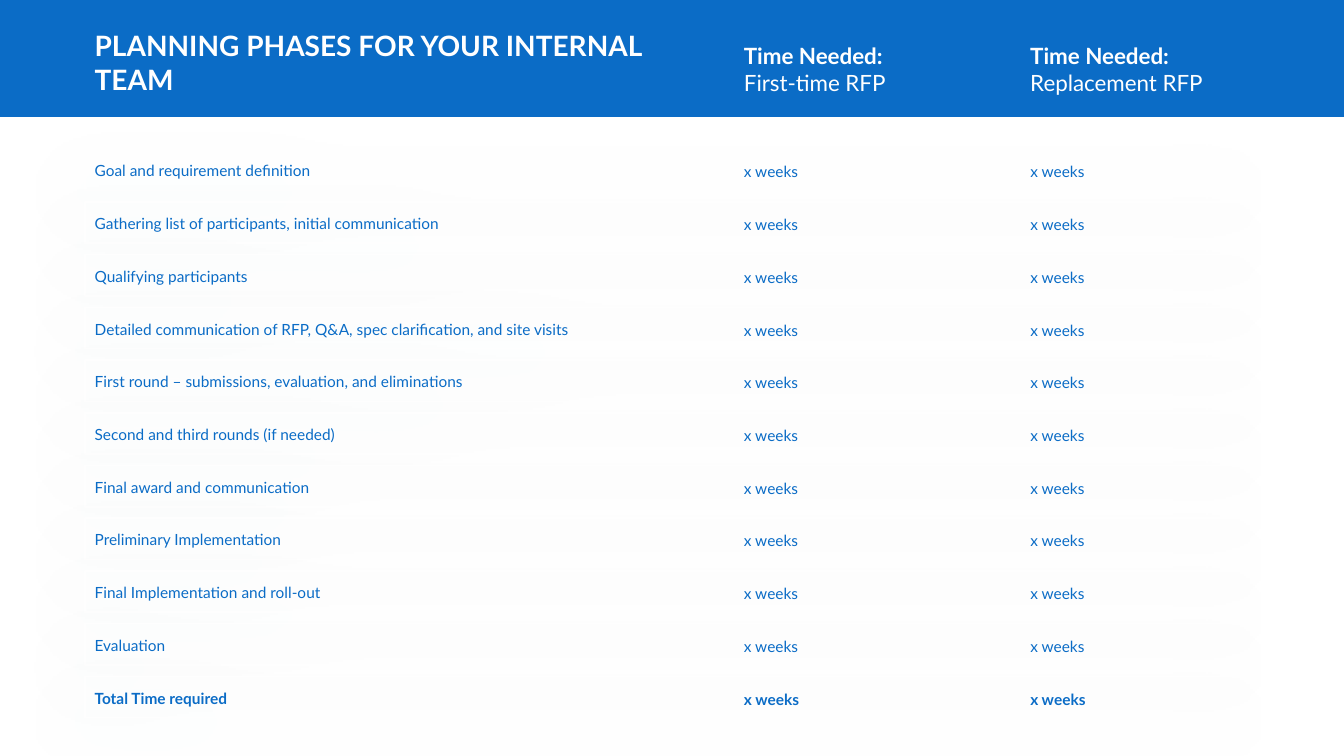
from lxml import etree
from pptx import Presentation
from pptx.dml.color import RGBColor
from pptx.enum.shapes import MSO_SHAPE
from pptx.enum.text import MSO_ANCHOR, PP_ALIGN
from pptx.oxml.ns import qn
from pptx.util import Inches, Pt

RECT = MSO_SHAPE.RECTANGLE
MIDDLE, BOTTOM = MSO_ANCHOR.MIDDLE, MSO_ANCHOR.BOTTOM
LEFT = PP_ALIGN.LEFT

# Content
TITLE = "PLANNING PHASES FOR YOUR INTERNAL TEAM"
PHASES = [
    ("Goal and requirement definition", "x weeks", "x weeks"),
    ("Gathering list of participants, initial communication", "x weeks", "x weeks"),
    ("Qualifying participants", "x weeks", "x weeks"),
    ("Detailed communication of RFP, Q&A, spec clarification, and site visits", "x weeks", "x weeks"),
    ("First round – submissions, evaluation, and eliminations", "x weeks", "x weeks"),
    ("Second and third rounds (if needed)", "x weeks", "x weeks"),
    ("Final award and communication", "x weeks", "x weeks"),
    ("Preliminary Implementation", "x weeks", "x weeks"),
    ("Final Implementation and roll-out", "x weeks", "x weeks"),
    ("Evaluation", "x weeks", "x weeks"),
    ("Total Time required", "x weeks", "x weeks"),
]
# Heading lines, left, heading width
TIME_COLUMNS = [
    (("Time Needed:", "First-time RFP"), 7.28, 1.61),
    (("Time Needed:", "Replacement RFP"), 10.12, 1.93),
]

# Style and layout (inches)
COLORS = {"blue": "0B6CC6", "white": "FFFFFF", "shadow": "378FF2"}
FONT = "Lato"
ROW_LEFT, ROW_W, ROW_H = 0.84, 11.65, 0.41
FIRST_TOP, LAST_TOP = 1.48, 6.71
VALUE_W = 1.38
HEAD_BOTTOM = 1.0


def color(name):
    return RGBColor.from_string(COLORS[name])


def style(p, size, name, bold):
    p.alignment = LEFT
    p.font.name, p.font.size, p.font.bold = FONT, Pt(size), bold
    p.font.color.rgb = color(name)


def add_heading(slide, lines, left, width, height, size, wrap):
    """Header text standing on the shared bottom edge; first line bold."""
    s = slide.shapes.add_textbox(Inches(left), Inches(HEAD_BOTTOM - height),
                                 Inches(width), Inches(height))
    tf = s.text_frame
    tf.word_wrap, tf.vertical_anchor = wrap, BOTTOM
    tf.text = "\n".join(lines)
    for i, p in enumerate(tf.paragraphs):
        style(p, size, "white", i == 0)


def fill_row_text(s, text, bold, bottom):
    tf = s.text_frame
    tf.word_wrap, tf.vertical_anchor = True, MIDDLE
    tf.margin_left = tf.margin_right = Inches(0.1)
    tf.margin_top, tf.margin_bottom = 0, Inches(bottom)
    tf.text = text
    p = tf.paragraphs[0]
    p.line_spacing, p.space_after = Pt(16), Pt(6)
    style(p, 11, "blue", bold)


def add_alpha(clr, percent):
    etree.SubElement(clr, qn("a:alpha"), val=str(percent * 1000))


def add_glow_outline(s):
    """Translucent white outline with a soft blue shadow."""
    s.fill.background()
    s.line.color.rgb = color("white")
    s.line.width = Pt(1.5)
    add_alpha(s.line._ln.find(".//" + qn("a:srgbClr")), 75)
    s.shadow.inherit = False
    effects = s._element.spPr.find(qn("a:effectLst"))
    shadow = etree.SubElement(effects, qn("a:outerShdw"), blurRad=str(Pt(50)),
                              dist=str(Pt(20)), dir=str(135 * 60000),
                              algn="tr", rotWithShape="0")
    add_alpha(etree.SubElement(shadow, qn("a:srgbClr"), val=COLORS["shadow"]), 10)


def main():
    prs = Presentation()
    prs.slide_width, prs.slide_height = Inches(13.33), Inches(7.5)
    slide = prs.slides.add_slide(prs.slide_layouts[6])

    # Header band
    band = slide.shapes.add_shape(RECT, 0, Inches(-0.01), Inches(13.34), Inches(1.17))
    band.shadow.inherit = False
    band.fill.solid()
    band.fill.fore_color.rgb = color("blue")
    band.line.fill.background()
    add_heading(slide, [TITLE], ROW_LEFT, 6.19, 0.78, 20, True)
    for lines, left, width in TIME_COLUMNS:
        add_heading(slide, lines, left, width, 0.64, 16, False)

    # Phase rows, the total in bold
    last = len(PHASES) - 1
    pitch = (LAST_TOP - FIRST_TOP) / last
    for i, (phase, *weeks) in enumerate(PHASES):
        top = Inches(FIRST_TOP + i * pitch)
        row = slide.shapes.add_shape(RECT, Inches(ROW_LEFT), top,
                                     Inches(ROW_W), Inches(ROW_H))
        add_glow_outline(row)
        fill_row_text(row, phase, i == last, 0.02)
        for (_, left, _), value in zip(TIME_COLUMNS, weeks):
            s = slide.shapes.add_textbox(Inches(left), top,
                                         Inches(VALUE_W), Inches(ROW_H))
            fill_row_text(s, value, i == last, 0)

    prs.save("out.pptx")


if __name__ == "__main__":
    main()
